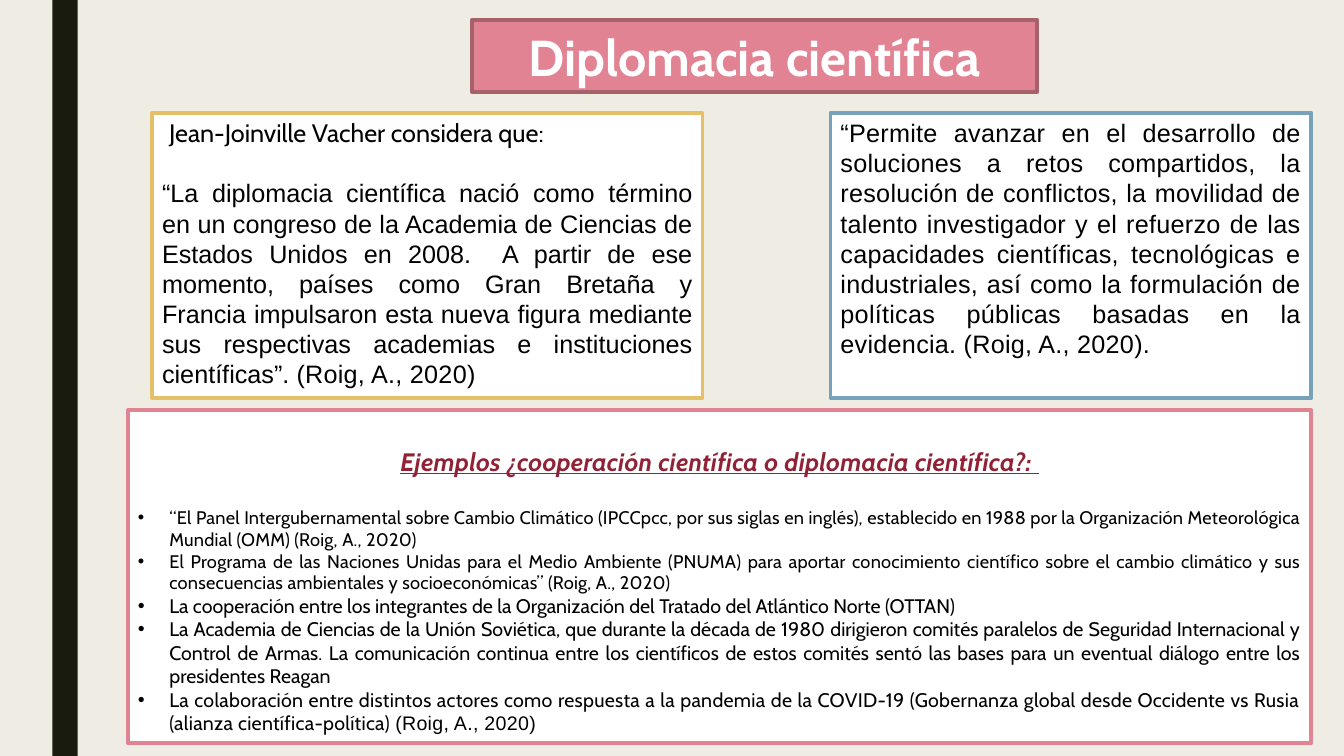
import pptx
import pptx.dml.color
import pptx.enum.shapes
import pptx.enum.text
import pptx.util
import lxml.etree

Pt = pptx.util.Pt
ALIGN = pptx.enum.text.PP_ALIGN
ANCHOR = pptx.enum.text.MSO_ANCHOR
WHITE = "FFFFFF"
BLACK = "000000"
PINK = "E28394"
SLIDE_WIDTH, SLIDE_HEIGHT = 960, 540
CARD_TOP, CARD_HEIGHT = 80.6, 203.8
CARD_LEADING = 21.5
CITATION = "(Roig, A., 2020)"


def color(hex_string):
    return pptx.dml.color.RGBColor.from_string(hex_string)


class DiplomacySlide:
    heading_font = "Cabin"
    quote_font = "Arial"
    border_width = 2.75
    bullet_indent = 22.5
    tracking = 0.2

    def __init__(self, presentation, background):
        self.slide = presentation.slides.add_slide(presentation.slide_layouts[6])
        self.slide.background.fill.solid()
        self.slide.background.fill.fore_color.rgb = color(background)

    def box(self, left, top, width, height, fill, border=None, anchor=ANCHOR.TOP, margin_top=3.6):
        box = self.slide.shapes.add_shape(
            pptx.enum.shapes.MSO_SHAPE.RECTANGLE, Pt(left), Pt(top), Pt(width), Pt(height))
        box.shadow.inherit = False
        box.fill.solid()
        box.fill.fore_color.rgb = color(fill)
        if border:
            box.line.color.rgb = color(border)
            box.line.width = Pt(self.border_width)
        else:
            box.line.fill.background()
        frame = box.text_frame
        frame.word_wrap = True
        frame.vertical_anchor = anchor
        frame.margin_top = Pt(margin_top)
        return frame

    def paragraph(self, frame, runs, size, font=heading_font, fill=BLACK, align=ALIGN.JUSTIFY,
                  leading=None, before=0, bold=False, italic=False, underline=False):
        paragraph = frame.paragraphs[0]
        if paragraph.runs:
            paragraph = frame.add_paragraph()
        paragraph.alignment = align
        paragraph.space_before = Pt(before)
        if leading:
            paragraph.line_spacing = Pt(leading)
        paragraph.font.size = Pt(size)
        paragraph.font.color.rgb = color(fill)
        paragraph.font.bold = bold
        paragraph.font.italic = italic
        paragraph.font.underline = underline
        fonts = {run_font or font for _, run_font, _ in runs}
        if len(fonts) == 1:
            paragraph.font.name = fonts.pop()
        for text, run_font, tracked in runs:
            run = paragraph.add_run()
            run.text = text
            if fonts:
                run.font.name = run_font or font
            if tracked:
                run._r.get_or_add_rPr().set("spc", str(round(self.tracking * 100)))
        return paragraph

    def bullet(self, frame, runs, size, leading, before=0):
        paragraph = self.paragraph(frame, runs, size, leading=leading, before=before)
        properties = paragraph._p.get_or_add_pPr()
        indent = Pt(self.bullet_indent)
        properties.set("marL", str(indent))
        properties.set("indent", str(-indent))
        namespace = properties.nsmap["a"]
        defaults = properties.find(f"{{{namespace}}}defRPr")
        for tag, attribute, value in (("buFont", "typeface", self.quote_font), ("buChar", "char", "•")):
            mark = lxml.etree.Element(f"{{{namespace}}}{tag}")
            mark.set(attribute, value)
            defaults.addprevious(mark)


def main():
    presentation = pptx.Presentation()
    presentation.slide_width = Pt(SLIDE_WIDTH)
    presentation.slide_height = Pt(SLIDE_HEIGHT)
    page = DiplomacySlide(presentation, "EFEDE3")
    arial = page.quote_font

    page.box(37.4, 0, 18, SLIDE_HEIGHT, "191B0E")

    origin = page.box(108.7, CARD_TOP, 393.1, CARD_HEIGHT, WHITE, "E6C069")
    page.paragraph(origin, [
        (" ", arial, False),
        ("Jean-Joinville Vacher\u00a0considera que:".replace("\u00a0", " "), None, False),
    ], 18, leading=CARD_LEADING)
    page.paragraph(origin, [
        ("“La diplomacia científica nació como término en un congreso de la Academia de Ciencias "
         "de Estados Unidos en 2008.  A partir de ese momento, países como Gran Bretaña y Francia "
         "impulsaron esta nueva figura mediante sus respectivas academias e instituciones "
         "científicas”. ", None, False),
        (CITATION, None, True),
    ], 18, font=arial, leading=CARD_LEADING, before=CARD_LEADING)

    title = page.box(337, 14.4, 403.9, 51.1, PINK, "A7616D", ANCHOR.MIDDLE)
    page.paragraph(title, [("Diplomacia científica", None, False)], 36,
                   fill=WHITE, align=ALIGN.CENTER, bold=True)

    benefits = page.box(593.3, CARD_TOP, 343.4, CARD_HEIGHT, WHITE, "77A2BB")
    page.paragraph(benefits, [
        ("“Permite avanzar en el desarrollo de soluciones a retos compartidos, la resolución de "
         "conflictos, la movilidad de talento investigador y el refuerzo de las capacidades "
         "científicas, tecnológicas e industriales, así como la formulación de políticas públicas "
         f"basadas en la evidencia. {CITATION}. ", None, True),
    ], 18, font=arial, leading=CARD_LEADING)

    examples = page.box(91.4, 293, 845.3, 237.6, WHITE, PINK, margin_top=25.5)
    page.paragraph(examples, [
        ("Ejemplos ¿cooperación científica o diplomacia científica?: ", None, True),
    ], 18, fill="912236", align=ALIGN.CENTER, bold=True, italic=True, underline=True)
    cases = [
        (13, 15.5, 21.9, [
            ("“El Panel Intergubernamental sobre Cambio Climático (IPCCpcc, por sus siglas en inglés), "
             f"establecido en 1988 por la Organización Meteorológica Mundial (OMM) {CITATION}", None, True)]),
        (13, 15.5, 0, [
            ("El Programa de las Naciones Unidas para el Medio Ambiente (PNUMA) para aportar "
             "conocimiento científico sobre el cambio climático y sus consecuencias ambientales y "
             f"socioeconómicas” {CITATION}", None, True)]),
        (14, 16.8, 0, [
            ("La cooperación entre los integrantes de la Organización del Tratado del Atlántico "
             "Norte (OTTAN)", None, False)]),
        (14, 16.8, 0, [
            ("La Academia de Ciencias de la Unión Soviética, que durante la década de 1980 dirigieron "
             "comités paralelos de Seguridad Internacional y Control de Armas. La comunicación "
             "continua entre los científicos de estos comités sentó las bases para un eventual "
             "diálogo entre los presidentes Reagan ", None, False)]),
        (14, 16.8, 0, [
            ("La colaboración entre distintos actores como respuesta a la pandemia de la COVID-19 "
             "(Gobernanza global desde Occidente vs Rusia (alianza científica-política) ", None, True),
            (CITATION, arial, True)]),
    ]
    for size, leading, before, runs in cases:
        page.bullet(examples, runs, size, leading, before)

    presentation.save("out.pptx")


if __name__ == "__main__":
    main()
